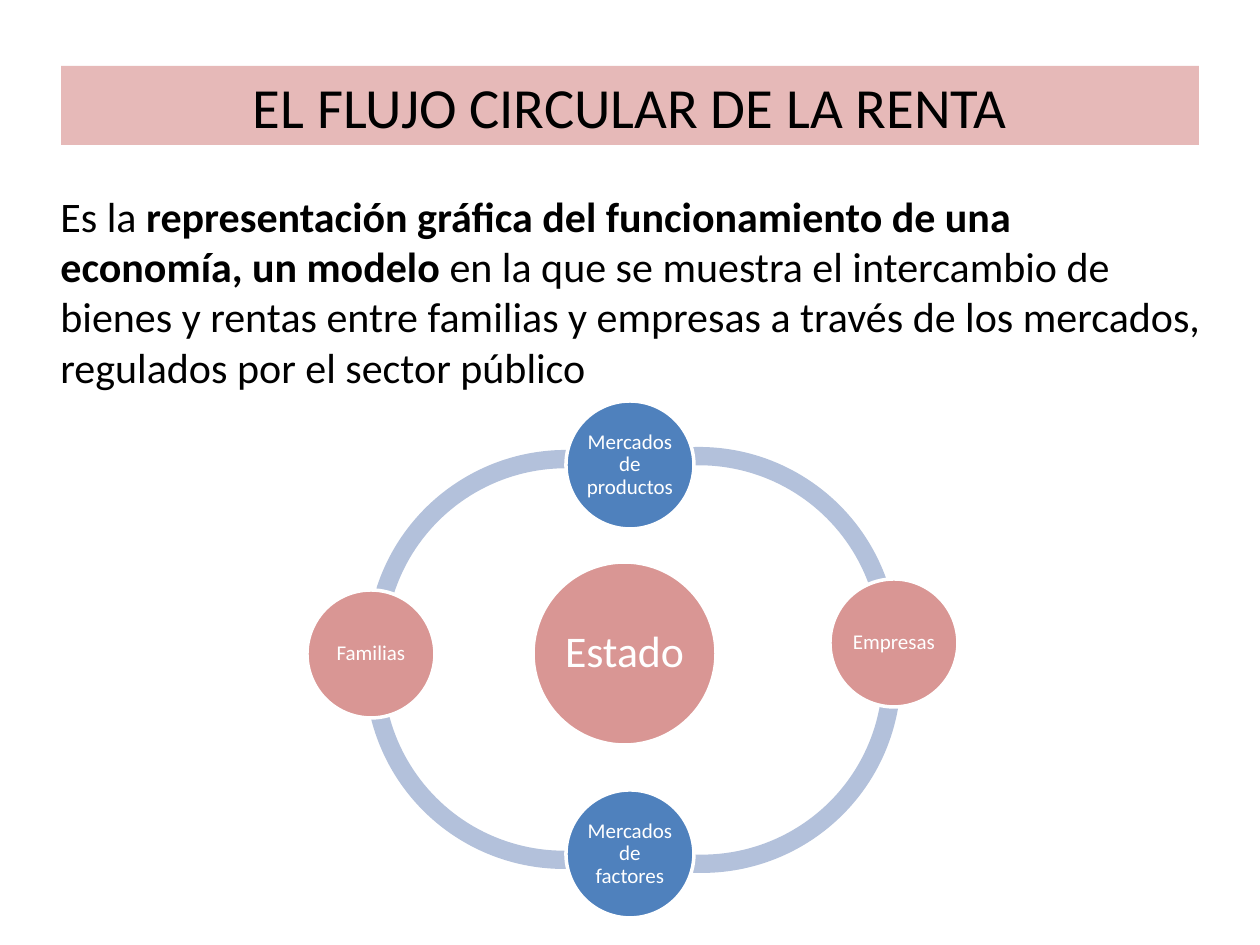
"""Build the slide on the circular flow of income."""
from pptx import Presentation
from pptx.dml.color import RGBColor
from pptx.enum.shapes import MSO_SHAPE
from pptx.enum.text import MSO_ANCHOR, PP_ALIGN
from pptx.util import Emu, Pt

COLORS = {
    "banner": "E6B9B8",
    "arc": "B3C1DB",
    "agent": "D99694",
    "market": "4F81BD",
    "white": "FFFFFF",
    "black": "000000",
}


def px(value):
    return Emu(round(value * 914400 / 126))


def style_run(run, size, color, bold=False):
    run.font.name = "Calibri"
    run.font.size = Pt(size)
    run.font.bold = bold
    run.font.color.rgb = RGBColor.from_string(COLORS[color])


presentation = Presentation()
presentation.slide_width = px(1260)
presentation.slide_height = px(945)
slide = presentation.slides.add_slide(presentation.slide_layouts[5])

title = slide.shapes.title
title.left, title.top, title.width, title.height = px(61), px(66), px(1138), px(79)
title.fill.solid()
title.fill.fore_color.rgb = RGBColor.from_string(COLORS["banner"])
title.text_frame.text = "EL FLUJO CIRCULAR DE LA RENTA"
title.text_frame.vertical_anchor = MSO_ANCHOR.MIDDLE
title.text_frame.paragraphs[0].alignment = PP_ALIGN.CENTER
style_run(title.text_frame.paragraphs[0].runs[0], 32.4, "black")

arcs = [
    (367, 450, 190, 275),
    (365, 471, 85, 173),
    (503, 475, 0, 97),
    (500, 447, 263, 350),
]
for left, top, start, end in arcs:
    arc = slide.shapes.add_shape(MSO_SHAPE.BLOCK_ARC, px(left), px(top), px(398), px(398))
    arc.shadow.inherit = False
    arc.fill.solid()
    arc.fill.fore_color.rgb = RGBColor.from_string(COLORS["arc"])
    arc.line.fill.background()
    for index, value in enumerate((start * 0.6, end * 0.6, 0.046)):
        arc.adjustments[index] = value

circles = [
    ("Estado", 533, 562, 183, 25, "agent"),
    ("Mercados de productos", 566, 401, 128, 12, "market"),
    ("Empresas", 830, 579, 128, 12, "agent"),
    ("Mercados de factores", 566, 790, 128, 12, "market"),
    ("Familias", 307, 590, 128, 12, "agent"),
]
for label, left, top, diameter, size, color in circles:
    circle = slide.shapes.add_shape(MSO_SHAPE.OVAL, px(left), px(top), px(diameter), px(diameter))
    circle.shadow.inherit = False
    circle.fill.solid()
    circle.fill.fore_color.rgb = RGBColor.from_string(COLORS[color])
    circle.line.color.rgb = RGBColor.from_string(COLORS["white"])
    circle.line.width = Pt(2)
    text_frame = circle.text_frame
    text_frame.margin_left = text_frame.margin_right = px(2)
    text_frame.margin_top = text_frame.margin_bottom = px(2)
    text_frame.word_wrap = True
    text_frame.vertical_anchor = MSO_ANCHOR.MIDDLE
    text_frame.text = label
    paragraph = text_frame.paragraphs[0]
    paragraph.alignment = PP_ALIGN.CENTER
    paragraph.line_spacing = 0.9
    style_run(paragraph.runs[0], size, "white")

definition = slide.shapes.add_textbox(px(48), px(184), px(1176), px(217))
definition.text_frame.word_wrap = True
paragraph = definition.text_frame.paragraphs[0]
parts = [
    ("Es la ", False),
    ("representación gráfica del funcionamiento de una  economía, un modelo ", True),
    ("en la que se muestra el intercambio de bienes y rentas entre familias y empresas "
     "a través de los mercados, regulados por el sector público", False),
]
for text, bold in parts:
    run = paragraph.add_run()
    run.text = text
    style_run(run, 24, "black", bold)

presentation.save("out.pptx")
